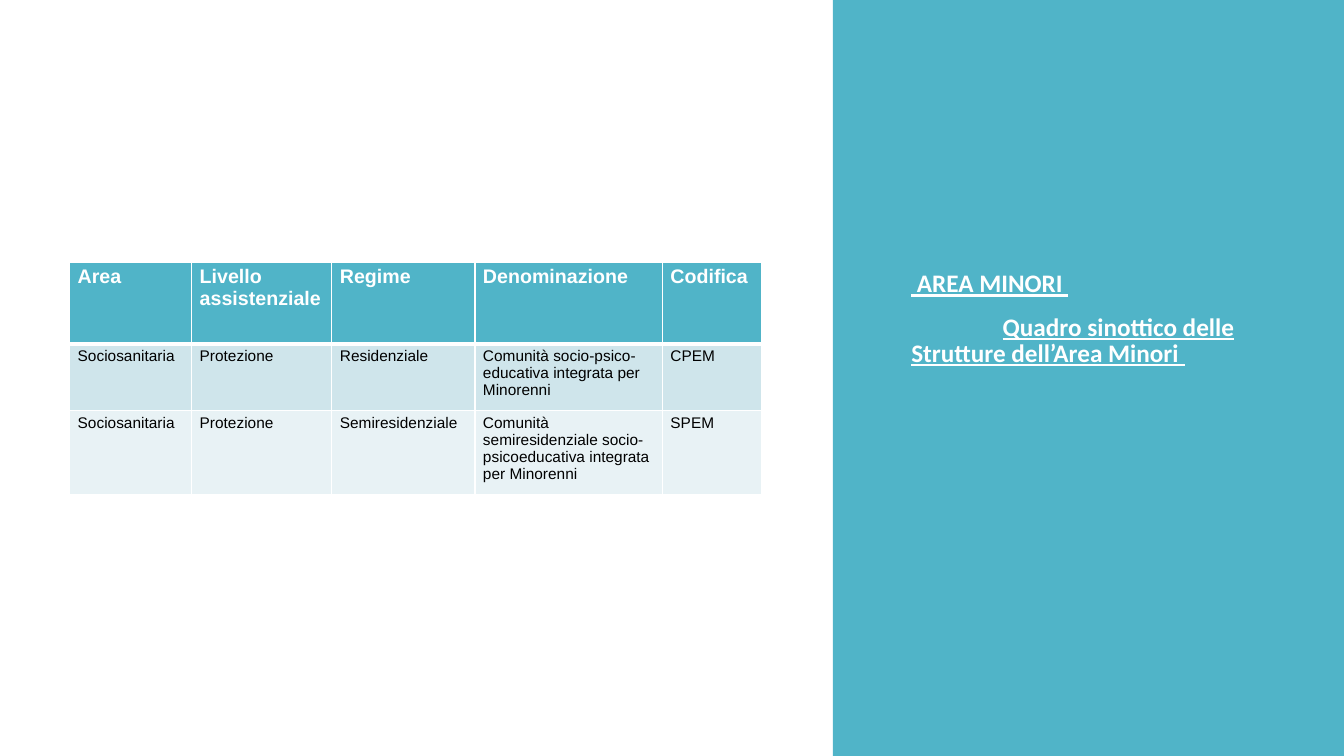
from lxml.etree import SubElement
from pptx import Presentation
from pptx.dml.color import RGBColor
from pptx.enum.shapes import MSO_SHAPE as Shape
from pptx.oxml.ns import qn
from pptx.util import Inches, Pt

WIDTH, HEIGHT = Inches(13.33), Inches(7.5)


def color(code):
    return RGBColor.from_string(code)


class Sheet:
    """Style and current page; lengths are percent of the page size."""

    teal, white, black = "50B4C8", "FFFFFF", "000000"
    bands = ("CFE5EB", "E8F2F5")
    title_font, table_font = "Calibri", "Arial"

    def __init__(self, page):
        self.page = page
        page.background.fill.solid()
        page.background.fill.fore_color.rgb = color(self.white)

    def across(self, share):
        return round(WIDTH * share / 100)

    def down(self, share):
        return round(HEIGHT * share / 100)

    def area(self, left, top, width, height):
        return self.across(left), self.down(top), self.across(width), self.down(height)

    def set_font(self, para, name, size, code, bold=False, underline=False):
        font = para.font
        font.name, font.size, font.bold = name, Pt(size), bold
        font.underline = underline
        font.color.rgb = color(code)

    def panel(self, *place):
        box = self.page.shapes.add_shape(Shape.RECTANGLE, *self.area(*place))
        box.shadow.inherit = False
        box.fill.solid()
        box.fill.fore_color.rgb = color(self.teal)
        box.line.fill.background()

    def title(self, lines, *place, tab=6.8):
        frame = self.page.shapes.add_textbox(*self.area(*place)).text_frame
        frame.word_wrap = True
        for index, line in enumerate(lines):
            para = frame.add_paragraph() if index else frame.paragraphs[0]
            para.line_spacing = 0.85
            para.space_before = Pt(13 if index else 0)
            # The tab carries the underline across the first-line indent
            stops = SubElement(para._p.get_or_add_pPr(), qn("a:tabLst"))
            SubElement(stops, qn("a:tab"), pos=str(self.across(tab)), algn="l")
            self.set_font(para, self.title_font, 18, self.white, True, True)
            para.add_run().text = line

    def borders(self, cell, bottom):
        props = cell._tc.get_or_add_tcPr()
        sides = {"a:lnL": 1, "a:lnR": 1, "a:lnT": 1, "a:lnB": bottom}
        for index, (side, points) in enumerate(sides.items()):
            line = props.makeelement(qn(side), {"w": str(Pt(points))})
            fill = SubElement(line, qn("a:solidFill"))
            SubElement(fill, qn("a:srgbClr"), val=self.white)
            props.insert(index, line)

    def cell(self, cell, text, fill, header):
        cell.text = text
        cell.margin_left = cell.margin_right = Inches(0.08)
        cell.margin_top = cell.margin_bottom = Inches(0.04)
        cell.fill.solid()
        cell.fill.fore_color.rgb = color(fill)
        size, code = (14, self.white) if header else (11, self.black)
        self.set_font(cell.text_frame.paragraphs[0], self.table_font, size, code, header)
        self.borders(cell, 3 if header else 1)

    def table(self, rows, left, top, widths, heights):
        place = self.area(left, top, sum(widths), sum(heights))
        table = self.page.shapes.add_table(len(rows), len(widths), *place).table
        for column, width in zip(table.columns, widths):
            column.width = self.across(width)
        for index, (row, height) in enumerate(zip(rows, heights)):
            table.rows[index].height = self.down(height)
            fill = self.bands[(index - 1) % 2] if index else self.teal
            for cell, text in zip(table.rows[index].cells, row):
                self.cell(cell, text, fill, header=index == 0)


def main():
    deck = Presentation()
    deck.slide_width, deck.slide_height = WIDTH, HEIGHT
    sheet = Sheet(deck.slides.add_slide(deck.slide_layouts[6]))

    # Coloured side panel with the title
    sheet.panel(61.97, 0, 38.03, 100)
    sheet.title(
        [" AREA MINORI ", "\tQuadro sinottico delle Strutture dell’Area Minori "],
        67.07, 35.33, 27.9, 48.93,
    )

    # Overview of the facilities
    facilities = [
        ("Area", "Livello assistenziale", "Regime", "Denominazione", "Codifica"),
        ("Sociosanitaria", "Protezione", "Residenziale",
         "Comunità socio-psico-educativa integrata per Minorenni", "CPEM"),
        ("Sociosanitaria", "Protezione", "Semiresidenziale",
         "Comunità semiresidenziale socio-psicoeducativa integrata per Minorenni",
         "SPEM"),
    ]
    sheet.table(facilities, 5.18, 34.67,
                widths=(9.08, 10.43, 10.65, 13.95, 7.35),
                heights=(10.8, 8.8, 11.2))

    deck.save("out.pptx")


if __name__ == "__main__":
    main()
